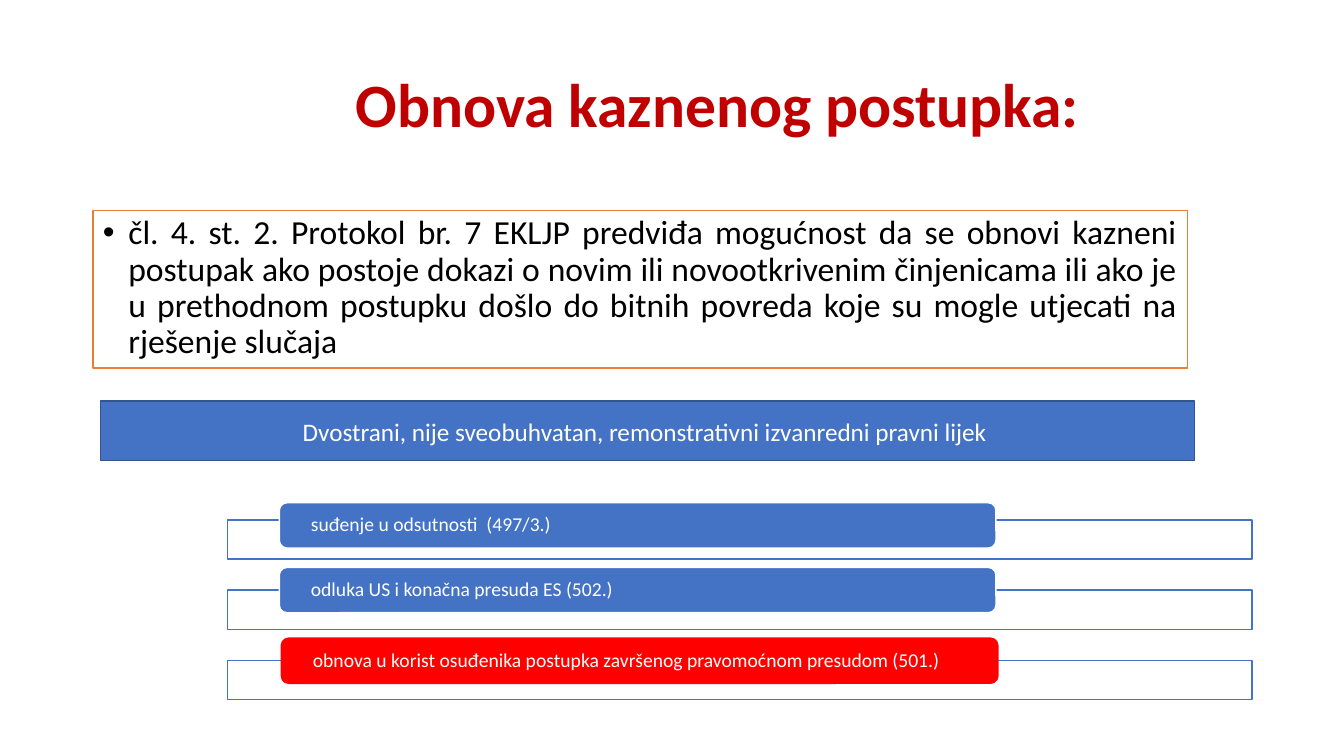
import pptx
import pptx.util
import pptx.dml.color
import pptx.enum.shapes
import pptx.enum.text
import pptx.oxml
import pptx.oxml.ns

Cm = pptx.util.Cm
Pt = pptx.util.Pt
Kind = pptx.enum.shapes.MSO_SHAPE
Align = pptx.enum.text.PP_ALIGN
Anchor = pptx.enum.text.MSO_ANCHOR

INK = {
    "title": "C00000",
    "text": "000000",
    "white": "FFFFFF",
    "blue": "4472C4",
    "navy": "325491",
    "orange": "ED7D31",
    "red": "FF0000",
}


def shade(name):
    return pptx.dml.color.RGBColor.from_string(INK[name])


def child(parent, tag, **attrs):
    node = pptx.oxml.parse_xml(f"<a:{tag} {pptx.oxml.ns.nsdecls('a')}/>")
    for key, value in attrs.items():
        node.set(key, str(value))
    parent.append(node)


def write(shape, text, size, ink="white", bold=False, align=Align.LEFT,
          anchor=Anchor.MIDDLE, line=0.9, inset=None, bullet=False):
    frame = shape.text_frame
    frame.word_wrap = True
    frame.auto_size = pptx.enum.text.MSO_AUTO_SIZE.NONE
    frame.vertical_anchor = anchor
    if inset is not None:
        frame.margin_left = frame.margin_right = Cm(inset)
        frame.margin_top = frame.margin_bottom = 0
    para = frame.paragraphs[0]
    if bullet:
        props = para._p.get_or_add_pPr()
        props.set("marL", str(Cm(0.64)))
        props.set("indent", str(-Cm(0.64)))
        child(props, "buFont", typeface="Arial")
        child(props, "buChar", char="•")
    para.alignment = align
    para.line_spacing = line
    para.space_before = Pt(0)
    run = para.add_run()
    run.text = text
    run.font.name = "Calibri"
    run.font.size = Pt(size)
    run.font.bold = bold
    run.font.color.rgb = shade(ink)


class Deck:
    def __init__(self):
        self.file = pptx.Presentation()
        self.file.slide_width = Cm(33.87)
        self.file.slide_height = Cm(19.05)
        self.slide = self.file.slides.add_slide(self.file.slide_layouts[1])

    def paint(self, shape, fill, edge, alpha=None):
        shape.fill.solid()
        shape.fill.fore_color.rgb = shade(fill)
        if alpha:
            tone = shape._element.spPr.find(".//" + pptx.oxml.ns.qn("a:srgbClr"))
            child(tone, "alpha", val=alpha * 1000)
        shape.line.color.rgb = shade(edge)
        shape.line.width = Pt(1)

    def place(self, index, left, top, width, height):
        shape = self.slide.placeholders[index]
        shape.left, shape.top = Cm(left), Cm(top)
        shape.width, shape.height = Cm(width), Cm(height)
        return shape

    def title(self, text, *box):
        write(self.place(0, *box), text, 44, "title", bold=True, align=Align.CENTER)

    def body(self, text, *box):
        shape = self.place(1, *box)
        self.paint(shape, "white", "orange")
        write(shape, text, 24, "text", align=Align.JUSTIFY, anchor=Anchor.TOP, bullet=True)

    def block(self, kind, box, fill, edge, alpha=None):
        shape = self.slide.shapes.add_shape(kind, *map(Cm, box))
        shape.shadow.inherit = False
        self.paint(shape, fill, edge, alpha)
        return shape

    def banner(self, text, *box):
        shape = self.block(Kind.RECTANGLE, box, "blue", "navy")
        write(shape, text, 18, align=Align.CENTER, line=1.0)

    def ground(self, text, row, left, top, fill, edge):
        self.block(Kind.RECTANGLE, (5.74, 13.1 + 1.77 * row, 25.81, 0.99),
                   "white", "blue", alpha=90)
        bar = self.block(Kind.ROUNDED_RECTANGLE, (left, top, 18.06, 1.14), fill, edge)
        write(bar, text, 14, inset=0.74)


def main():
    deck = Deck()
    deck.title("Obnova kaznenog postupka: ", 3.66, 0.86, 29.21, 3.68)
    deck.body("čl. 4. st. 2. Protokol br. 7 EKLJP predviđa mogućnost da se obnovi "
              "kazneni postupak ako postoje dokazi o novim ili novootkrivenim "
              "činjenicama ili ako je u prethodnom postupku došlo do bitnih povreda "
              "koje su mogle utjecati na rješenje slučaja", 2.34, 5.31, 27.58, 3.96)
    grounds = [
        ("suđenje u odsutnosti  (497/3.)", 7.04, 12.67, "blue", "white"),
        ("odluka US i konačna presuda ES (502.)", 7.04, 14.3, "blue", "white"),
        ("obnova u korist osuđenika postupka završenog pravomoćnom presudom (501.)",
         7.09, 16.08, "red", "red"),
    ]
    for row, (text, *look) in enumerate(grounds):
        deck.ground(text, row, *look)
    deck.banner("Dvostrani, nije sveobuhvatan, remonstrativni izvanredni pravni lijek ",
                2.54, 10.11, 27.56, 1.5)
    deck.file.save("out.pptx")


if __name__ == "__main__":
    main()
